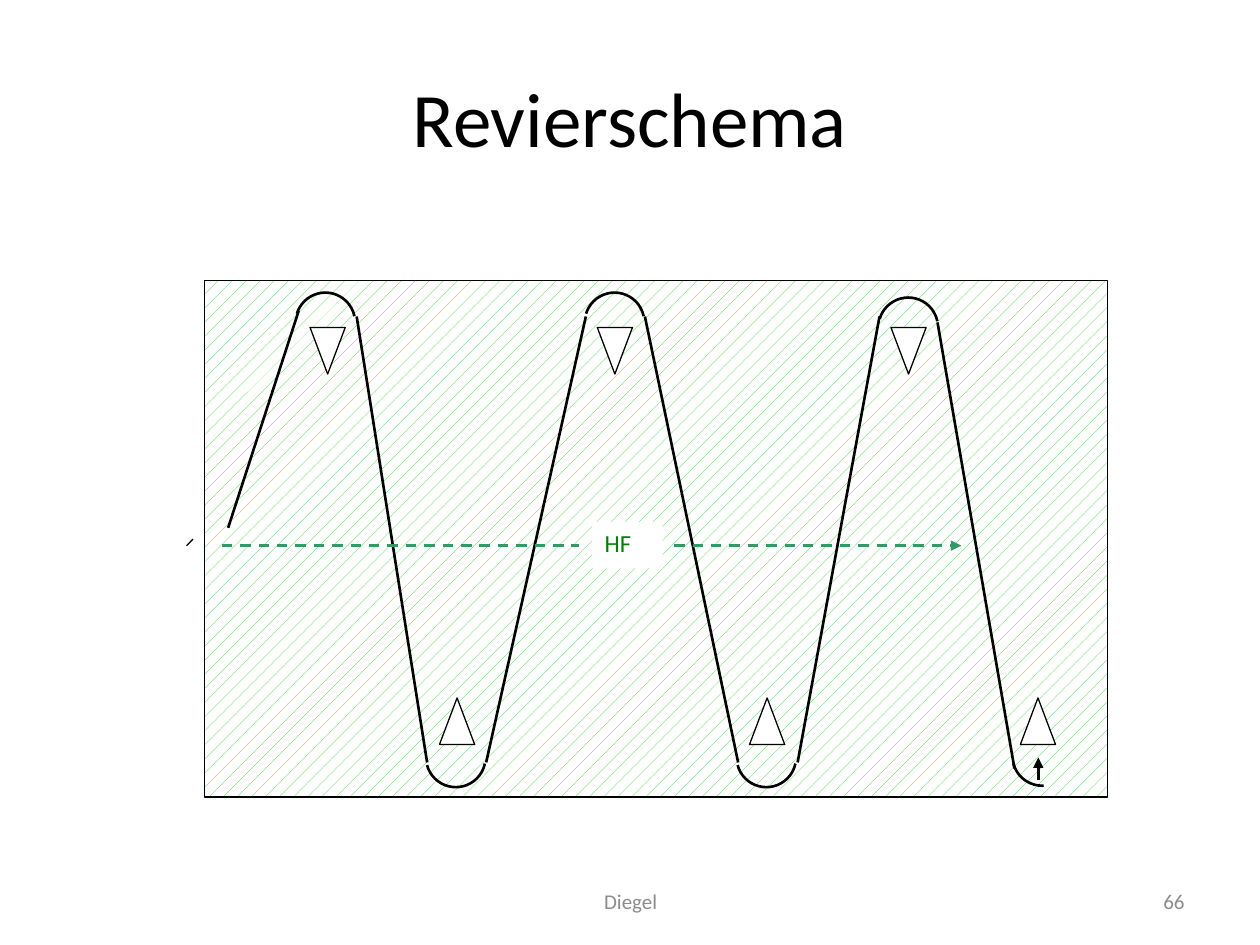
from pptx import Presentation
from pptx.dml.color import RGBColor
from pptx.enum import dml, shapes, text
from pptx.oxml.ns import qn
from pptx.util import Cm, Pt
from lxml import etree

BLACK = RGBColor(0x00, 0x00, 0x00)
WHITE = RGBColor(0xFF, 0xFF, 0xFF)
GRAY = RGBColor(0x8C, 0x8C, 0x8C)
LIME = RGBColor(0x33, 0xCC, 0x33)
GREEN = RGBColor(0x00, 0x80, 0x00)
TEAL = RGBColor(0x33, 0x99, 0x66)
FORM = shapes.MSO_SHAPE
ALIGN = text.PP_ALIGN
MIDDLE = text.MSO_ANCHOR.MIDDLE


def write(shape, words, size, color, align=ALIGN.LEFT, anchor=MIDDLE):
    frame = shape.text_frame
    frame.word_wrap = True
    frame.vertical_anchor = anchor
    para = frame.paragraphs[0]
    para.text = words
    para.alignment = align
    para.font.name = "Calibri"
    para.font.size = Pt(size)
    para.font.color.rgb = color


def draw(x1, y1, x2, y2, color=BLACK, width=1.5, dash=False, arrow=False):
    """Draw a straight line, with an arrowhead at its end if asked."""
    line = slide.shapes.add_connector(
        shapes.MSO_CONNECTOR.STRAIGHT, Cm(x1), Cm(y1), Cm(x2), Cm(y2))
    line.line.color.rgb = color
    line.line.width = Pt(width)
    if dash:
        line.line.dash_style = dml.MSO_LINE.DASH
    if arrow:
        etree.SubElement(line.line._get_or_add_ln(), qn("a:tailEnd"), type="triangle")
    etree.SubElement(line._element.spPr, qn("a:effectLst"))


deck = Presentation()
deck.slide_width, deck.slide_height = Cm(25.4), Cm(19.05)
slide = deck.slides.add_slide(deck.slide_layouts[5])

title = slide.shapes.title
title.left, title.top, title.width, title.height = Cm(1.27), Cm(0.76), Cm(22.86), Cm(3.18)
write(title, "Revierschema", 44, BLACK, ALIGN.CENTER)

# Search area
area = slide.shapes.add_shape(FORM.RECTANGLE, Cm(4.12), Cm(5.66), Cm(18.21), Cm(10.41))
area.shadow.inherit = False
area.fill.patterned()
area.fill.pattern = dml.MSO_PATTERN.PERCENT_10
area.fill.fore_color.rgb = LIME
area.fill.back_color.rgb = WHITE
area.line.color.rgb = BLACK
area.line.width = Pt(0.75)

# Triangles: upper row points down, lower row points up
for top, turn, lefts in ((6.6, 180, (6.25, 12.04, 17.96)),
                         (14.07, 0, (8.86, 15.11, 20.57))):
    for left in lefts:
        mark = slide.shapes.add_shape(
            FORM.ISOSCELES_TRIANGLE, Cm(left), Cm(top), Cm(0.71), Cm(0.94))
        mark.shadow.inherit = False
        mark.rotation = turn
        mark.fill.solid()
        mark.fill.fore_color.rgb = WHITE
        mark.line.color.rgb = BLACK
        mark.line.width = Pt(0.75)

# Turns: centre, start and end angle in degrees, clockwise from the right
RADIUS = 0.6
UPPER, LOWER = (197, 348), (12, 165)
for x, y, (start, end) in ((6.56, 6.5, UPPER), (9.19, 15.27, LOWER),
                           (12.39, 6.5, UPPER), (15.45, 15.27, LOWER),
                           (18.31, 6.6, UPPER), (21.01, 15.24, (87, 165))):
    turn = slide.shapes.add_shape(
        FORM.ARC, Cm(x - RADIUS), Cm(y - RADIUS), Cm(2 * RADIUS), Cm(2 * RADIUS))
    turn.shadow.inherit = False
    turn.adjustments[0] = start * 0.6
    turn.adjustments[1] = end * 0.6
    turn.fill.background()
    turn.line.color.rgb = BLACK
    turn.line.width = Pt(1.5)

# Legs of the zigzag
for leg in ((4.6, 10.64, 6.02, 6.27), (8.61, 15.37, 7.19, 6.38),
            (9.8, 15.37, 11.81, 6.38), (14.88, 15.37, 13, 6.38),
            (16.08, 15.37, 17.73, 6.38), (20.45, 15.49, 18.9, 6.5)):
    draw(*leg)
draw(3.76, 11, 3.89, 10.87, width=0.75)
draw(20.93, 15.72, 20.93, 15.27, arrow=True)

# Dashed centre line with its label
draw(4.47, 11, 11.68, 11, TEAL, dash=True)
label = slide.shapes.add_shape(FORM.RECTANGLE, Cm(11.94), Cm(10.52), Cm(1.42), Cm(0.94))
label.shadow.inherit = False
label.fill.solid()
label.fill.fore_color.rgb = WHITE
label.line.fill.background()
write(label, "HF", 14, GREEN, anchor=text.MSO_ANCHOR.TOP)
draw(13.59, 11, 19.38, 11, TEAL, dash=True, arrow=True)

for words, left, width, align in (("66", 18.21, 5.92, ALIGN.RIGHT),
                                  ("Diegel", 8.69, 8.05, ALIGN.CENTER)):
    foot = slide.shapes.add_textbox(Cm(left), Cm(17.65), Cm(width), Cm(1.02))
    write(foot, words, 12, GRAY, align)

deck.save("out.pptx")
